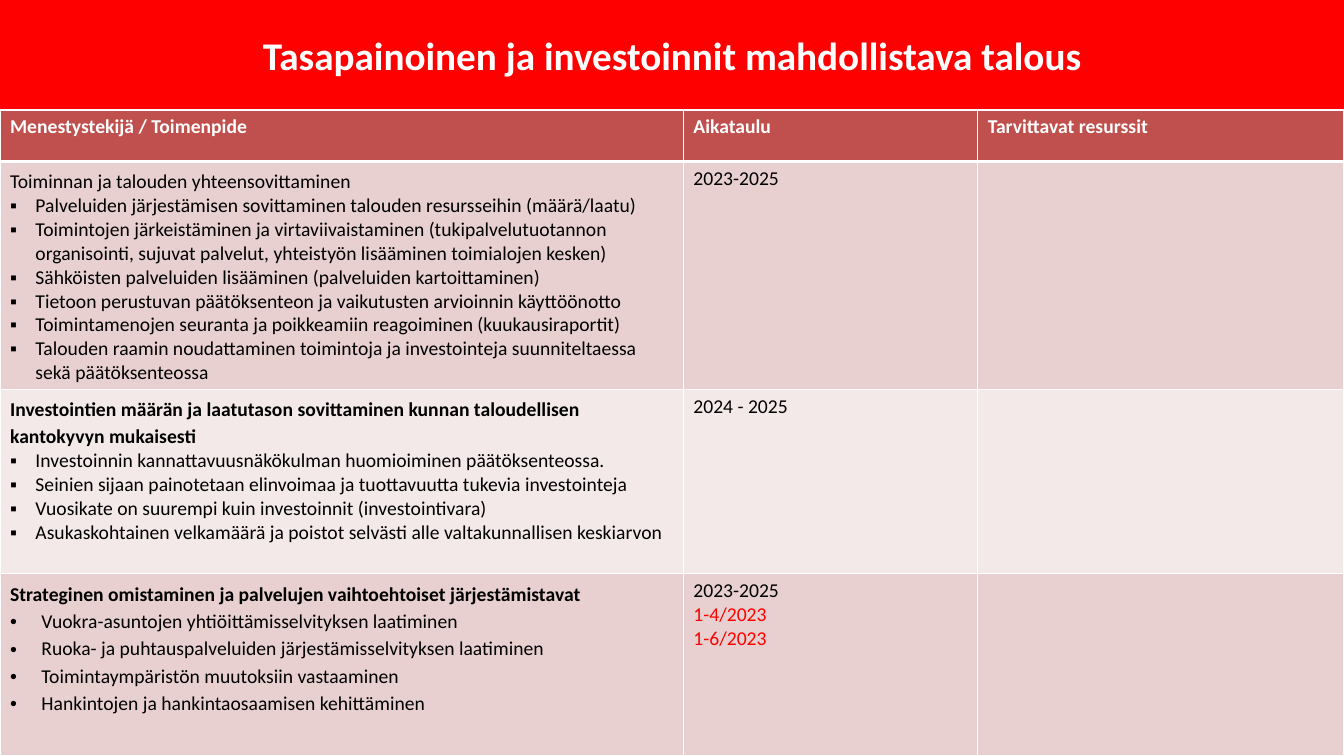
from lxml import etree
from pptx import Presentation
from pptx import util as u
from pptx.dml import color
from pptx.enum import shapes, text
from pptx.oxml import ns

COLORS = {
    "red": "FF0000",
    "header": "C0504D",
    "odd": "E8D0D0",
    "even": "F4E9E9",
    "white": "FFFFFF",
    "black": "000000",
}
WIDTH, HEIGHT = 33.87, 19.05
TITLE_HEIGHT = 2.77
COLUMNS = [17.22, 7.42, 9.23]
ROWS = [1.3, 5.74, 4.65, 4.59]

HEADINGS = ["Menestystekijä / Toimenpide", "Aikataulu", "Tarvittavat resurssit"]
GOALS = [
    {
        "name": "Toiminnan ja talouden yhteensovittaminen",
        "bold": False,
        "bullet": "▪",
        "indent": 0.64,
        "spacing": None,
        "actions": [
            "Palveluiden järjestämisen sovittaminen talouden resursseihin (määrä/laatu)",
            "Toimintojen järkeistäminen ja virtaviivaistaminen (tukipalvelutuotannon "
            "organisointi, sujuvat palvelut, yhteistyön lisääminen toimialojen kesken)",
            "Sähköisten palveluiden lisääminen (palveluiden kartoittaminen)",
            "Tietoon perustuvan päätöksenteon ja vaikutusten arvioinnin käyttöönotto",
            "Toimintamenojen seuranta ja poikkeamiin reagoiminen (kuukausiraportit)",
            "Talouden raamin noudattaminen toimintoja ja investointeja suunniteltaessa "
            "sekä päätöksenteossa",
        ],
        "schedule": [("2023-2025", "black")],
    },
    {
        "name": "Investointien määrän ja laatutason sovittaminen kunnan taloudellisen "
                "kantokyvyn mukaisesti",
        "bold": True,
        "bullet": "▪",
        "indent": 0.64,
        "spacing": None,
        "actions": [
            "Investoinnin kannattavuusnäkökulman huomioiminen päätöksenteossa.",
            "Seinien sijaan painotetaan elinvoimaa ja tuottavuutta tukevia investointeja",
            "Vuosikate on suurempi kuin investoinnit (investointivara)",
            "Asukaskohtainen velkamäärä ja poistot selvästi alle valtakunnallisen keskiarvon",
        ],
        "schedule": [("2024 - 2025", "black")],
    },
    {
        "name": "Strateginen omistaminen ja palvelujen vaihtoehtoiset järjestämistavat",
        "bold": True,
        "bullet": "•",
        "indent": 0.79,
        "spacing": 1.15,
        "actions": [
            "Vuokra-asuntojen yhtiöittämisselvityksen laatiminen",
            "Ruoka- ja puhtauspalveluiden järjestämisselvityksen laatiminen",
            "Toimintaympäristön muutoksiin vastaaminen",
            "Hankintojen ja hankintaosaamisen kehittäminen",
        ],
        "schedule": [("2023-2025", "black"), ("1-4/2023", "red"), ("1-6/2023", "red")],
    },
]


class Deck:
    font = "Calibri"
    body_size = 14

    def __init__(self):
        self.prs = Presentation()
        self.prs.slide_width = u.Cm(WIDTH)
        self.prs.slide_height = u.Cm(HEIGHT)
        self.slide = self.prs.slides.add_slide(self.prs.slide_layouts[6])

    def rgb(self, name):
        return color.RGBColor.from_string(COLORS[name])

    def run(self, paragraph, words, ink="black", bold=False, size=None):
        run = paragraph.add_run()
        run.text = words
        run.font.name = self.font
        run.font.size = u.Pt(size or self.body_size)
        run.font.bold = bold
        run.font.color.rgb = self.rgb(ink)

    def next_paragraph(self, frame):
        first = frame.paragraphs[0]
        return first if not first.runs else frame.add_paragraph()

    def band(self, height, fill):
        band = self.slide.shapes.add_shape(
            shapes.MSO_SHAPE.RECTANGLE, 0, 0, u.Cm(WIDTH), u.Cm(height))
        band.shadow.inherit = False
        band.fill.solid()
        band.fill.fore_color.rgb = self.rgb(fill)
        band.line.fill.background()

    def title(self, words):
        title = self.slide.shapes.add_textbox(0, 0, u.Cm(WIDTH), u.Cm(TITLE_HEIGHT))
        frame = title.text_frame
        frame.word_wrap = True
        frame.vertical_anchor = text.MSO_ANCHOR.MIDDLE
        frame.paragraphs[0].alignment = text.PP_ALIGN.CENTER
        self.run(frame.paragraphs[0], words, "white", True, 28)

    def table(self, columns, rows):
        table = self.slide.shapes.add_table(
            len(rows), len(columns), 0, u.Cm(TITLE_HEIGHT),
            u.Cm(sum(columns)), u.Cm(sum(rows))).table
        table.horz_banding = False
        for column, width in zip(table.columns, columns):
            column.width = u.Cm(width)
        for row, height in zip(table.rows, rows):
            row.height = u.Cm(height)
        return table

    def cell(self, cell, fill, top=1, bottom=1):
        props = cell._tc.get_or_add_tcPr()
        for side, points in (("L", 1), ("R", 1), ("T", top), ("B", bottom)):
            line = etree.SubElement(props, ns.qn(f"a:ln{side}"), w=str(u.Pt(points)))
            solid = etree.SubElement(line, ns.qn("a:solidFill"))
            etree.SubElement(solid, ns.qn("a:srgbClr"), val=COLORS["white"])
        cell.fill.solid()
        cell.fill.fore_color.rgb = self.rgb(fill)

    def bullet(self, paragraph, mark, indent):
        props = paragraph._p.get_or_add_pPr()
        props.set("marL", str(u.Cm(indent)))
        props.set("indent", str(-u.Cm(indent)))
        etree.SubElement(props, ns.qn("a:buFont"), typeface="Arial")
        etree.SubElement(props, ns.qn("a:buChar"), char=mark)

    def goal(self, frame, goal):
        name = self.next_paragraph(frame)
        name.line_spacing = 1.15
        self.run(name, goal["name"], bold=goal["bold"])
        for words in goal["actions"]:
            action = self.next_paragraph(frame)
            if goal["spacing"]:
                action.line_spacing = goal["spacing"]
            self.bullet(action, goal["bullet"], goal["indent"])
            self.run(action, words)

    def schedule(self, frame, dates):
        for words, ink in dates:
            self.run(self.next_paragraph(frame), words, ink)


def main():
    deck = Deck()
    deck.band(3.94, "red")
    deck.title("Tasapainoinen ja investoinnit mahdollistava talous")
    plan = deck.table(COLUMNS, ROWS)
    for col, heading in enumerate(HEADINGS):
        cell = plan.cell(0, col)
        deck.cell(cell, "header", bottom=3)
        deck.run(cell.text_frame.paragraphs[0], heading, "white", True)
    for row, goal in enumerate(GOALS, 1):
        for col in range(len(COLUMNS)):
            deck.cell(plan.cell(row, col), "odd" if row % 2 else "even",
                      top=3 if row == 1 else 1)
        deck.goal(plan.cell(row, 0).text_frame, goal)
        deck.schedule(plan.cell(row, 1).text_frame, goal["schedule"])
    deck.prs.save("out.pptx")


if __name__ == "__main__":
    main()
